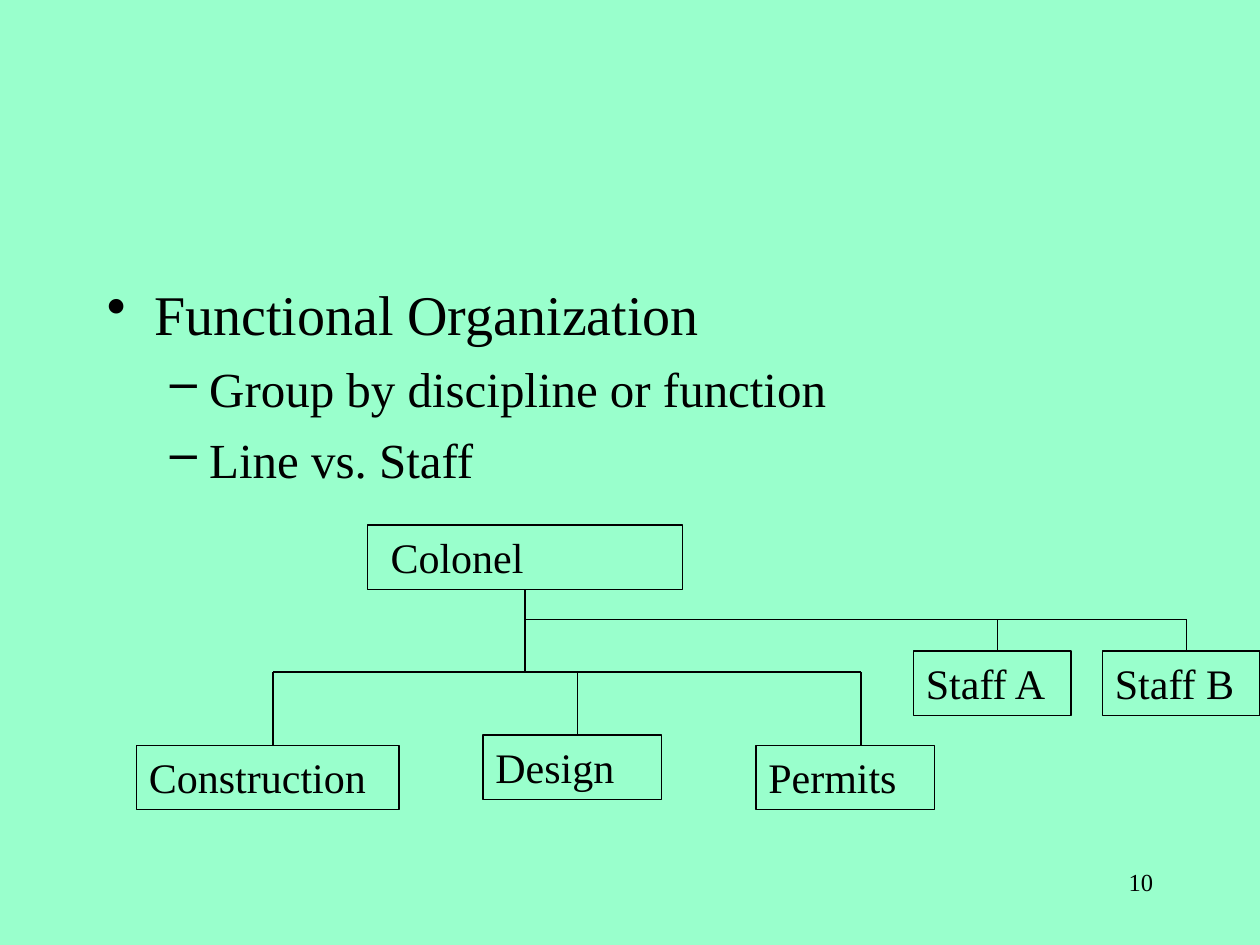
from lxml import etree
from pptx import Presentation
from pptx.dml.color import RGBColor
from pptx.enum.shapes import MSO_CONNECTOR, MSO_SHAPE
from pptx.enum.text import MSO_ANCHOR, PP_ALIGN
from pptx.oxml.ns import qn
from pptx.util import Pt

MINT = RGBColor(0x99, 0xFF, 0xCC)
BLACK = RGBColor(0, 0, 0)
FONT = "Times New Roman"
STRAIGHT = MSO_CONNECTOR.STRAIGHT
RECTANGLE = MSO_SHAPE.RECTANGLE
TOP = MSO_ANCHOR.TOP
LEFT, RIGHT = PP_ALIGN.LEFT, PP_ALIGN.RIGHT
BOTTOM_SIDE = 2
BOX_HEIGHT = 36.72


def style_paragraph(paragraph, size, alignment=LEFT):
    """Align a paragraph and format its runs."""
    paragraph.alignment = alignment
    for run in paragraph.runs:
        run.font.name = FONT
        run.font.size = Pt(size)
        run.font.color.rgb = BLACK


def add_bullet(paragraph, character, margin, hanging):
    """Give a paragraph a bullet with a hanging indent."""
    properties = paragraph._p.get_or_add_pPr()
    properties.set("marL", str(Pt(margin)))
    properties.set("indent", str(-Pt(hanging)))
    etree.SubElement(properties, qn("a:buChar")).set("char", character)


def add_outline(slide, left, top, width, height):
    """Place the bulleted outline."""
    text_frame = slide.shapes.add_textbox(Pt(left), Pt(top), Pt(width), Pt(height)).text_frame
    text_frame.word_wrap = True
    text_frame.text = "Functional Organization\nGroup by discipline or function\nLine vs. Staff"
    heading, *details = text_frame.paragraphs
    add_bullet(heading, "•", 27, 27)
    style_paragraph(heading, 32)
    for paragraph in details:
        paragraph.level = 1
        paragraph.space_before = Pt(7)
        add_bullet(paragraph, "–", 58.5, 22.5)
        style_paragraph(paragraph, 28)


def add_box(slide, text, left, top, width, inset=7.2):
    """Place one outlined unit of the chart."""
    shape = slide.shapes.add_shape(RECTANGLE, Pt(left), Pt(top), Pt(width), Pt(BOX_HEIGHT))
    shape.shadow.inherit = False
    shape.fill.background()
    shape.line.color.rgb = BLACK
    shape.line.width = Pt(0.75)
    text_frame = shape.text_frame
    text_frame.word_wrap = True
    text_frame.vertical_anchor = TOP
    text_frame.margin_left = Pt(inset)
    text_frame.text = text
    style_paragraph(text_frame.paragraphs[0], 24)
    return shape


def add_line(slide, start_x, start_y, end_x, end_y):
    """Draw one thin straight line."""
    connector = slide.shapes.add_connector(
        STRAIGHT, Pt(start_x), Pt(start_y), Pt(end_x), Pt(end_y))
    connector.line.color.rgb = BLACK
    connector.line.width = Pt(0.75)
    etree.SubElement(connector._element.spPr, qn("a:effectLst"))
    return connector


def add_branch(slide, rail_start, rail_end, rail_y, units):
    """Draw a horizontal rail with units hanging below it."""
    add_line(slide, rail_start, rail_y, rail_end, rail_y)
    for text, left, top, width, drop_x in units:
        add_box(slide, text, left, top, width)
        add_line(slide, drop_x, rail_y, drop_x, top)


def add_organization_chart(slide, left, top):
    """Place the head, the line units and the staff units."""
    stem_x, staff_y, line_y = left + 222, top + 54, top + 84
    head = add_box(slide, "Colonel", left + 132, top, 180, inset=13.2)
    stem = add_line(slide, stem_x, top + BOX_HEIGHT, stem_x, line_y)
    stem.begin_connect(head, BOTTOM_SIDE)
    add_branch(slide, left + 78, left + 414, line_y, [
        ("Construction", left, top + 126, 150, left + 78),
        ("Design", left + 198, top + 120, 102, left + 252),
        ("Permits", left + 354, top + 126, 102, left + 414),
    ])
    add_branch(slide, stem_x, left + 600, staff_y, [
        ("Staff A", left + 444, top + 72, 90, left + 492),
        ("Staff B", left + 552, top + 72, 90, left + 600),
    ])


def add_slide_number(slide, left, top, width, height):
    """Place the slide number."""
    text_frame = slide.shapes.add_textbox(Pt(left), Pt(top), Pt(width), Pt(height)).text_frame
    text_frame.word_wrap = True
    text_frame.text = "10"
    style_paragraph(text_frame.paragraphs[0], 14, RIGHT)


def main():
    """Build and save the presentation."""
    presentation = Presentation()
    presentation.slide_width, presentation.slide_height = Pt(720), Pt(540)
    slide = presentation.slides.add_slide(presentation.slide_layouts[6])
    slide.background.fill.solid()
    slide.background.fill.fore_color.rgb = MINT
    add_slide_number(slide, 516, 492, 150, 36)
    add_outline(slide, 54, 156, 612, 354)
    add_organization_chart(slide, 78, 300)
    presentation.save("out.pptx")


if __name__ == "__main__":
    main()
